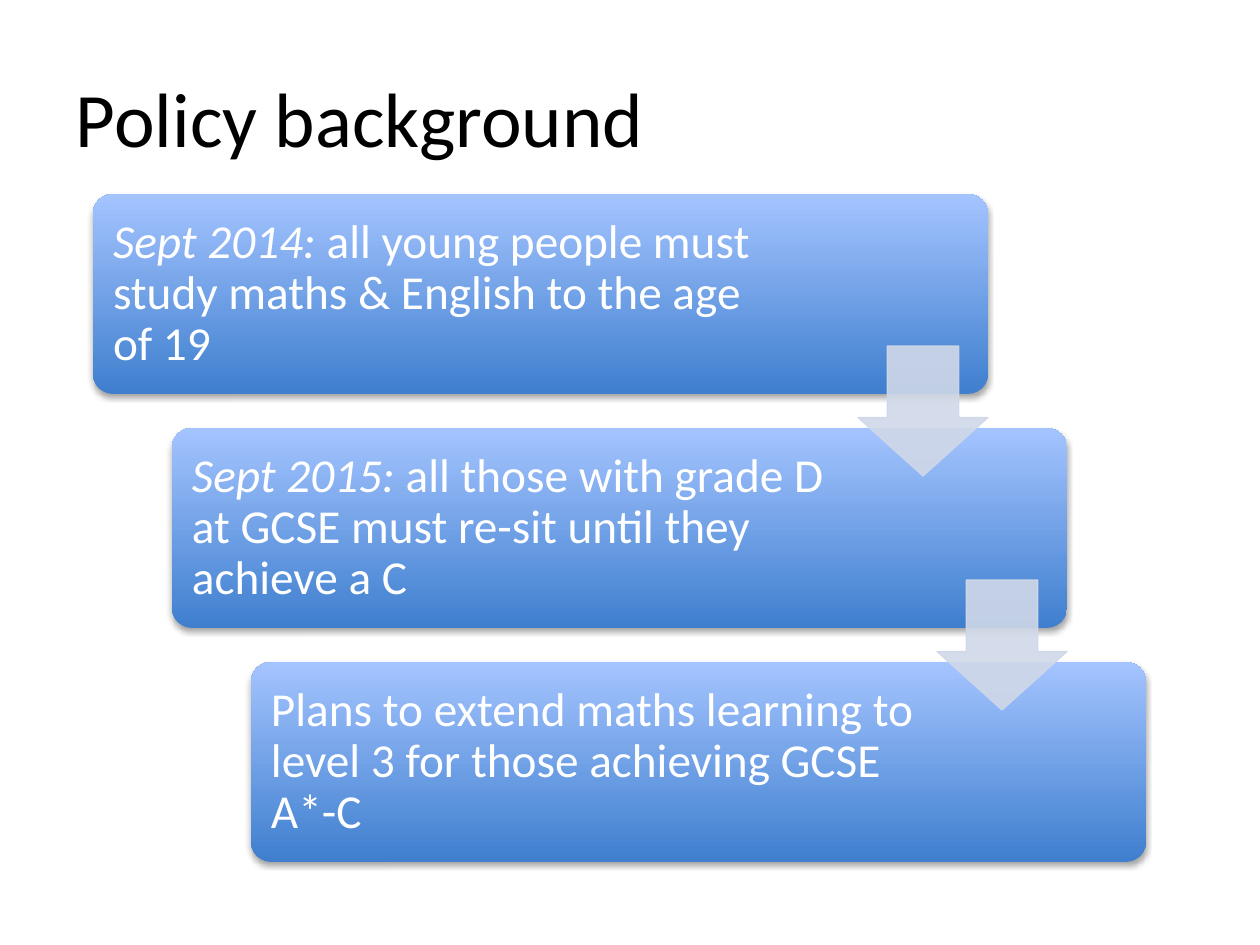
from lxml.etree import SubElement
from pptx import Presentation
from pptx.dml.color import RGBColor
from pptx.enum.shapes import MSO_SHAPE as Shape
from pptx.enum.text import MSO_ANCHOR as Anchor, PP_ALIGN as Align
from pptx.oxml.ns import qn
from pptx.util import Emu, Pt

PX = 914400 / 126
COLORS = {
    "title": "000000",
    "card_text": "FFFFFF",
    "card_bottom": "3F7FCE",
    "card_top": "A4C4FF",
    "arrow": "D0D8E8",
    "shadow": "000000",
}
STAGES = [
    ("Sept 2014: ", "all young people must study maths & English to the age of 19"),
    ("Sept 2015: ", "all those with grade D at GCSE must re-sit until they achieve a C"),
    ("", "Plans to extend maths learning to level 3 for those achieving GCSE A*-C"),
]
CARD_LEFT, CARD_TOP, CARD_WIDTH, CARD_HEIGHT = 93, 194, 895, 200
STEP_X, STEP_Y = 79, 234
ARROW_SIZE = 130


def px(length):
    return Emu(round(length * PX))


def rgb(name):
    return RGBColor.from_string(COLORS[name])


def set_alpha(color_element, percent):
    SubElement(color_element, qn("a:alpha"), val=str(percent * 1000))


def add_text(page, text, left, top, width, height, *, size, color,
             lead="", inset=13, spacing=1.0):
    """Add a left-aligned text box, with an optional italic lead-in."""
    box = page.shapes.add_textbox(px(left), px(top), px(width), px(height))
    frame = box.text_frame
    frame.word_wrap = True
    frame.vertical_anchor = Anchor.MIDDLE
    frame.margin_left = frame.margin_right = px(inset)
    frame.margin_top = frame.margin_bottom = px(inset)
    para = frame.paragraphs[0]
    para.alignment = Align.LEFT
    para.line_spacing = spacing
    for words, italic in ((lead, True), (text, False)):
        if words:
            span = para.add_run()
            span.text = words
            span.font.name = "Calibri"
            span.font.size = Pt(size)
            span.font.italic = italic
            span.font.color.rgb = rgb(color)


def add_card_shadow(card):
    effects = card._element.spPr.find(qn("a:effectLst"))
    shadow = SubElement(effects, qn("a:outerShdw"), blurRad=str(Pt(3.1)),
                        dist=str(Pt(1.8)), dir="5400000", rotWithShape="0")
    color = SubElement(shadow, qn("a:srgbClr"), val=COLORS["shadow"])
    set_alpha(color, 35)


def add_card(page, left, top, lead, text):
    card = page.shapes.add_shape(Shape.ROUNDED_RECTANGLE, px(left), px(top),
                                 px(CARD_WIDTH), px(CARD_HEIGHT))
    card.adjustments[0] = 0.1
    card.shadow.inherit = False
    card.line.fill.background()
    card.fill.gradient()
    card.fill.gradient_angle = 90
    for stop, name in zip(card.fill.gradient_stops, ("card_bottom", "card_top")):
        stop.color.rgb = rgb(name)
    add_card_shadow(card)
    add_text(page, text, left + 6, top + 6, 675, CARD_HEIGHT - 11,
             size=27, color="card_text", lead=lead, inset=14, spacing=0.9)


def add_arrow(page, left, top):
    arrow = page.shapes.add_shape(Shape.DOWN_ARROW, px(left), px(top),
                                  px(ARROW_SIZE), px(ARROW_SIZE))
    arrow.adjustments[0] = 0.55
    arrow.adjustments[1] = 0.45
    arrow.shadow.inherit = False
    arrow.line.width = Pt(0.75)
    for fill in (arrow.fill, arrow.line.fill):
        fill.solid()
        fill.fore_color.rgb = rgb("arrow")
    for color in arrow._element.spPr.iter(qn("a:srgbClr")):
        set_alpha(color, 90)


def main():
    deck = Presentation()
    deck.slide_width, deck.slide_height = px(1260), px(945)
    page = deck.slides.add_slide(deck.slide_layouts[6])
    add_text(page, "Policy background", 63, 38, 840, 157, size=44, color="title")

    corners = [(CARD_LEFT + i * STEP_X, CARD_TOP + i * STEP_Y)
               for i in range(len(STAGES))]
    for (left, top), (lead, text) in zip(corners, STAGES):
        add_card(page, left, top, lead, text)
    for left, top in corners[:-1]:
        add_arrow(page, left + CARD_WIDTH - ARROW_SIZE, top + 152)
    deck.save("out.pptx")


if __name__ == "__main__":
    main()
